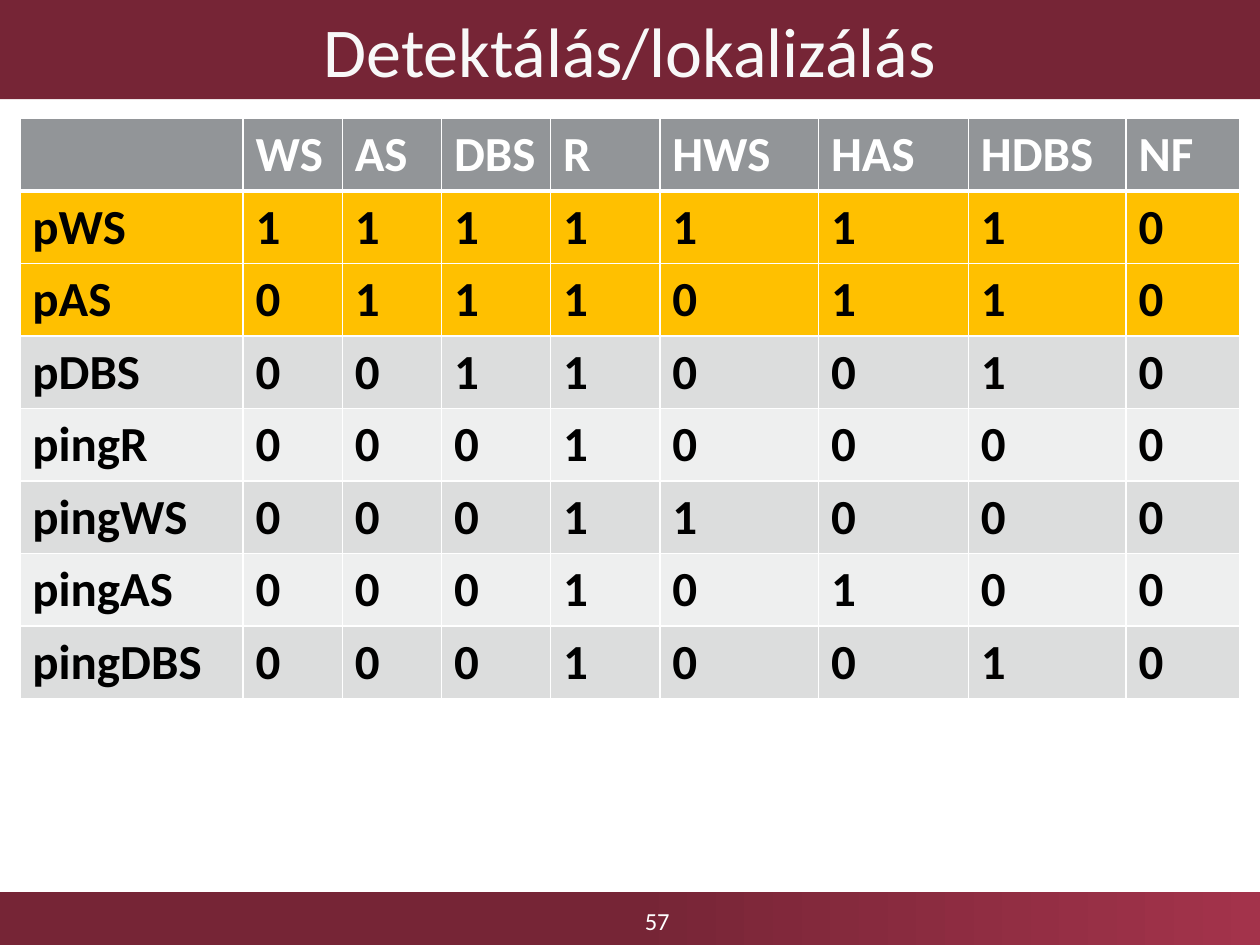
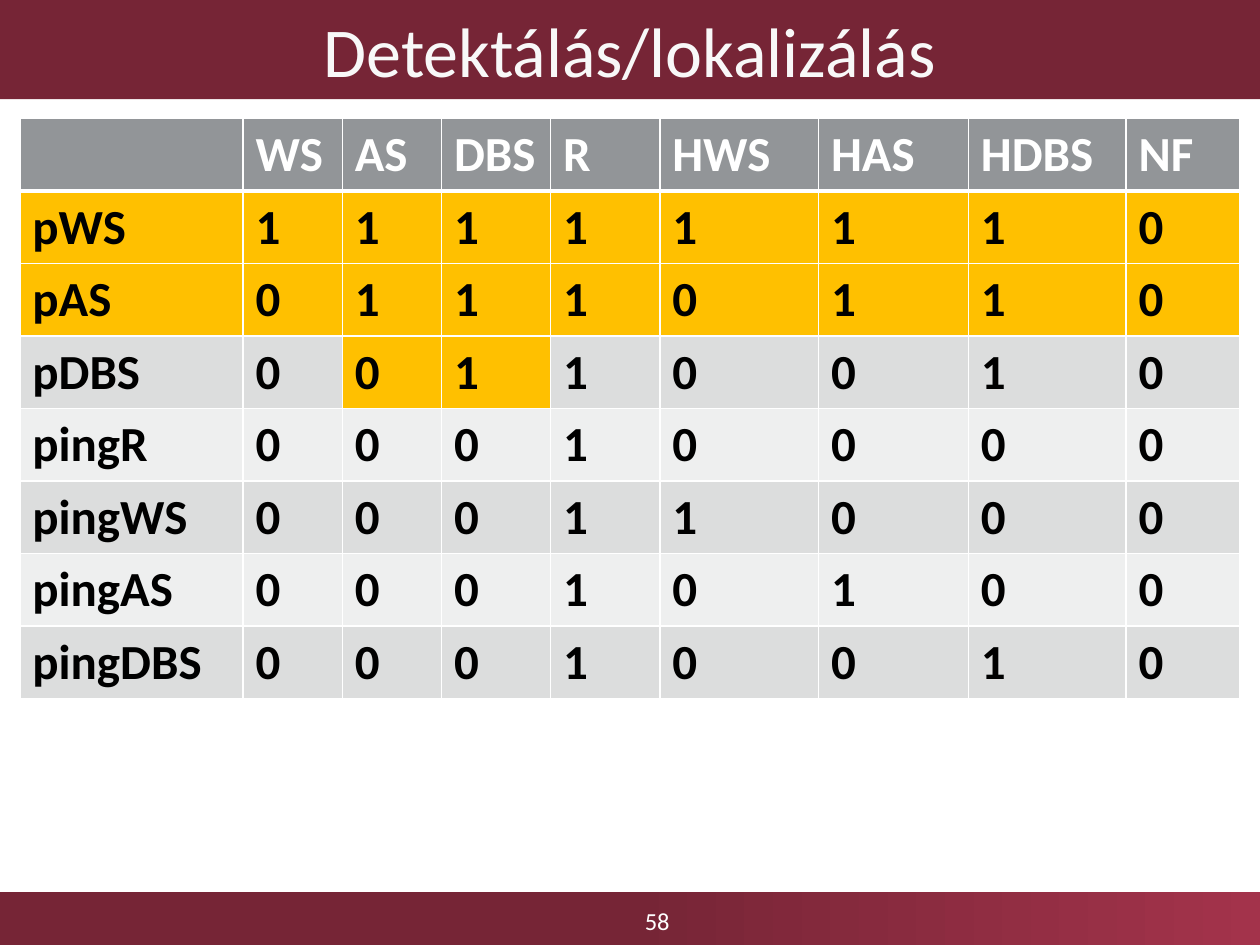
import pptx
import pptx.dml.color
import pptx.enum.shapes
import pptx.enum.text
import pptx.oxml
import pptx.oxml.ns
import pptx.util
from pptx.util import Cm

TITLE = "Detektálás/lokalizálás"
FAULTS = ["", "WS", "AS", "DBS", "R", "HWS", "HAS", "HDBS", "NF"]
PROBES = [
    ("pWS", "11111110"),
    ("pAS", "01110110"),
    ("pDBS", "00110010"),
    ("pingR", "00010000"),
    ("pingWS", "00011000"),
    ("pingAS", "00010100"),
    ("pingDBS", "00010010"),
]
SELECTED_PROBES = ["pWS", "pAS"]
PAGES = [
    {"number": 57, "distinguishing": []},
    {"number": 58, "distinguishing": [("pDBS", "AS"), ("pDBS", "DBS")]},
]

COLORS = {
    "band": "762536",
    "band_end": "A3334B",
    "title": "F8F8F8",
    "white": "FFFFFF",
    "black": "000000",
    "header": "929598",
    "selected": "FFC000",
    "odd_row": "DCDDDD",
    "even_row": "EEEFEF",
}
FONT = "Calibri"
SLIDE_WIDTH, SLIDE_HEIGHT = Cm(25.4), Cm(19.05)
TITLE_HEIGHT = Cm(2)
FOOTER_TOP = Cm(17.98)
COLUMN_WIDTHS = [4.5, 2, 2, 2.2, 2.2, 3.2, 3.02, 3.18, 2.3]
MATRIX_LEFT, MATRIX_TOP, MATRIX_HEIGHT = Cm(0.4), Cm(2.39), Cm(11.51)


def rgb(name):
    return pptx.dml.color.RGBColor.from_string(COLORS[name])


def write(text_frame, text, size, color, bold=False, align=None):
    text_frame.text = text
    paragraph = text_frame.paragraphs[0]
    paragraph.alignment = align
    for font in [paragraph.font] + [run.font for run in paragraph.runs]:
        font.name = FONT
        font.size = pptx.util.Pt(size)
        font.bold = bold
        font.color.rgb = rgb(color)


def write_centred(shape, text, size, color):
    frame = shape.text_frame
    frame.word_wrap = True
    frame.auto_size = pptx.enum.text.MSO_AUTO_SIZE.NONE
    frame.vertical_anchor = pptx.enum.text.MSO_ANCHOR.MIDDLE
    write(frame, text, size, color, align=pptx.enum.text.PP_ALIGN.CENTER)


def add_footer(slide, number):
    band = slide.shapes.add_shape(
        pptx.enum.shapes.MSO_SHAPE.RECTANGLE,
        0, FOOTER_TOP, SLIDE_WIDTH, SLIDE_HEIGHT - FOOTER_TOP)
    band.shadow.inherit = False
    band.line.fill.background()
    band.fill.gradient()
    band.fill.gradient_angle = 0
    stops = zip(band.fill.gradient_stops, [(0.5, "band"), (1, "band_end")])
    for stop, (position, color) in stops:
        stop.position = position
        stop.color.rgb = rgb(color)
    page_number = slide.shapes.add_textbox(Cm(9.12), Cm(18.06), Cm(8.26), Cm(0.99))
    write_centred(page_number, str(number), 14, "white")


def add_title(slide):
    title = slide.shapes.title
    title.left, title.top, title.width, title.height = 0, 0, SLIDE_WIDTH, TITLE_HEIGHT
    title.fill.solid()
    title.fill.fore_color.rgb = rgb("band")
    write_centred(title, TITLE, 40, "title")


def set_borders(cell, top, bottom):
    properties = cell._tc.get_or_add_tcPr()
    for side, points in {"L": 1, "R": 1, "T": top, "B": bottom}.items():
        properties.append(pptx.oxml.parse_xml(
            f'<a:ln{side} {pptx.oxml.ns.nsdecls("a")} w="{pptx.util.Pt(points)}">'
            f'<a:solidFill><a:srgbClr val="{COLORS["white"]}"/></a:solidFill></a:ln{side}>'))


def fill_name(row, probe, fault, distinguishing):
    if row == 0:
        return "header"
    if probe in SELECTED_PROBES or (probe, fault) in distinguishing:
        return "selected"
    return "odd_row" if row % 2 else "even_row"


def add_matrix(slide, distinguishing):
    rows = [FAULTS] + [[probe, *results] for probe, results in PROBES]
    matrix = slide.shapes.add_table(
        len(rows), len(FAULTS), MATRIX_LEFT, MATRIX_TOP,
        Cm(sum(COLUMN_WIDTHS)), MATRIX_HEIGHT).table
    for column, width in zip(matrix.columns, COLUMN_WIDTHS):
        column.width = Cm(width)
    for r, values in enumerate(rows):
        for c, value in enumerate(values):
            cell = matrix.cell(r, c)
            set_borders(cell, top=3 if r == 1 else 1, bottom=3 if r == 0 else 1)
            cell.fill.solid()
            cell.fill.fore_color.rgb = rgb(
                fill_name(r, values[0], FAULTS[c], distinguishing))
            write(cell.text_frame, value, 28, "black" if r else "white", bold=True)


def main():
    deck = pptx.Presentation()
    deck.slide_width, deck.slide_height = SLIDE_WIDTH, SLIDE_HEIGHT
    title_only = deck.slide_layouts[5]
    for page in PAGES:
        slide = deck.slides.add_slide(title_only)
        add_footer(slide, page["number"])
        add_title(slide)
        add_matrix(slide, page["distinguishing"])
    deck.save("out.pptx")


if __name__ == "__main__":
    main()
